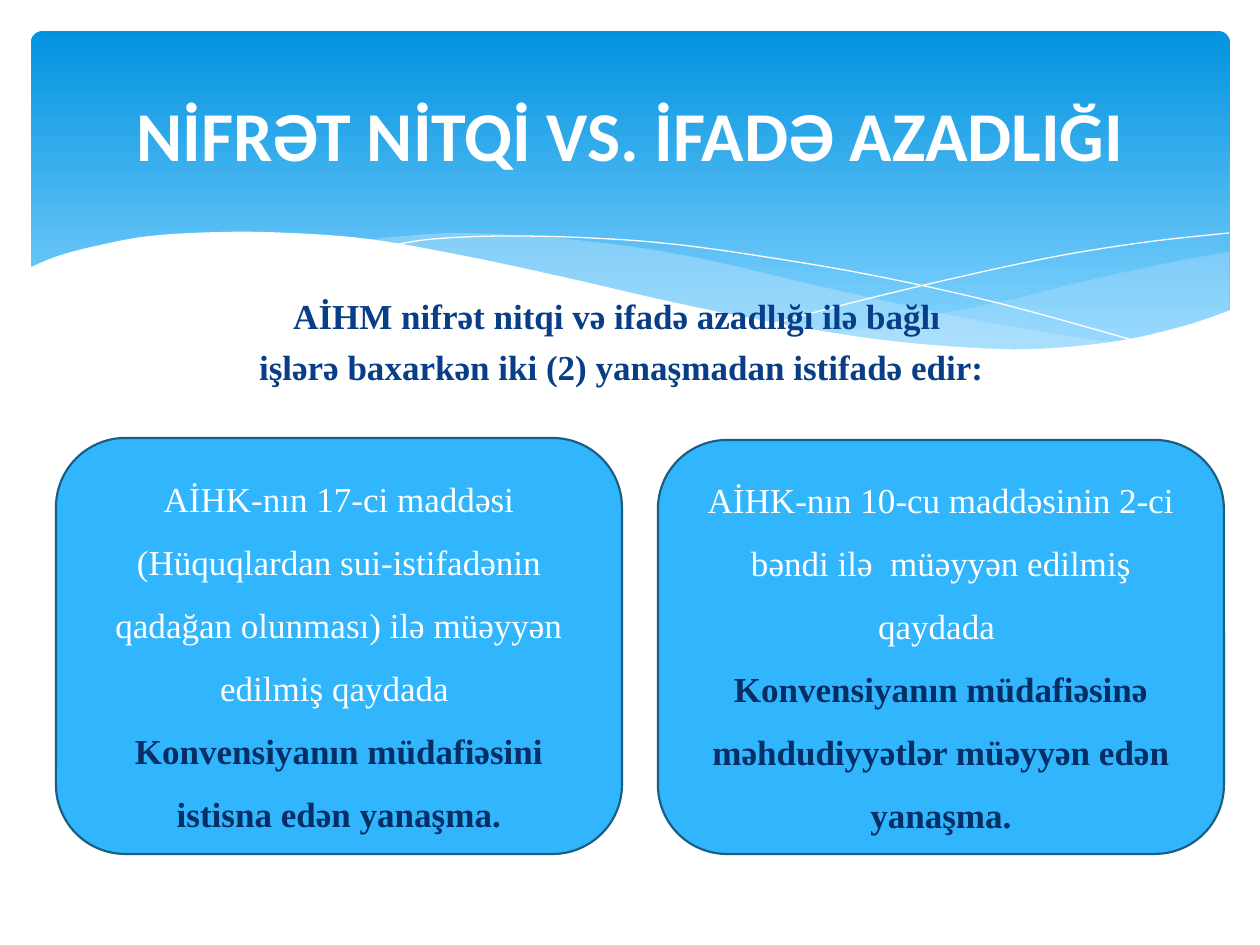
from lxml.etree import SubElement
from pptx import Presentation
from pptx.dml.color import RGBColor
from pptx.enum.shapes import MSO_SHAPE
from pptx.enum.text import MSO_ANCHOR, PP_ALIGN
from pptx.oxml.ns import qn
from pptx.util import Pt

PX = 914400 / 126
SLIDE_WIDTH, SLIDE_HEIGHT = 1260, 945
CURVE_STEPS = 6

WHITE = RGBColor(0xFF, 0xFF, 0xFF)
SKY_TOP = RGBColor(0x02, 0x93, 0xE0)
SKY_BOTTOM = RGBColor(0x83, 0xD3, 0xFE)
PALE_BLUE = RGBColor(0xC6, 0xE7, 0xFC)
CARD_BLUE = RGBColor(0x31, 0xB6, 0xFD)
CARD_EDGE = RGBColor(0x19, 0x5F, 0x84)
INTRO_BLUE = RGBColor(0x07, 0x3E, 0x87)
DEEP_BLUE = RGBColor(0x05, 0x2E, 0x65)

RIGHT_WAVE = [
    [(1229, 252), (1178, 261), (1085, 281), (1014, 299), (949, 312), (890, 324), (833, 334)],
    [(833, 334), (871, 339), (939, 347), (1012, 350), (1076, 348), (1130, 340), (1178, 330),
     (1229, 311)],
]
MIDDLE_WAVE = [
    [(1125, 344), (1055, 334), (976, 320), (890, 302), (793, 280), (717, 262), (648, 249),
     (586, 241), (529, 236), (455, 233), (394, 237), (360, 241)],
    [(360, 241), (431, 251), (509, 266), (566, 280), (668, 302), (757, 321), (838, 335),
     (910, 345), (974, 349), (1031, 350), (1092, 348), (1125, 344)],
]
FALLING_LINE = [[(389, 246), (433, 239), (505, 236), (591, 238), (672, 244), (766, 257),
                 (876, 276), (1002, 304), (1143, 343)]]
RISING_LINE = [[(772, 324), (847, 304), (942, 281), (1053, 257), (1147, 242), (1229, 233)]]
WHITE_WAVE = [
    [(1231, 310), (1184, 326), (1118, 341), (1037, 349), (959, 347), (867, 338), (760, 320),
     (667, 301), (563, 277), (460, 255), (368, 239), (290, 233), (223, 232), (150, 236),
     (96, 246), (58, 256), (29, 268)],
    [(29, 415), (1231, 415)],
]

TITLE = "NİFRƏT NİTQİ VS. İFADƏ AZADLIĞI"
INTRO = [
    "AİHM nifrət nitqi və ifadə azadlığı ilə bağlı ",
    "işlərə baxarkən iki (2) yanaşmadan istifadə edir:",
]
CARDS = [
    ((56, 438, 566, 416),
     "AİHK-nın 17-ci maddəsi (Hüquqlardan sui-istifadənin qadağan olunması) "
     "ilə müəyyən edilmiş qaydada ",
     "Konvensiyanın müdafiəsini istisna edən yanaşma."),
    ((658, 440, 566, 414),
     "AİHK-nın 10-cu maddəsinin 2-ci bəndi ilə  müəyyən edilmiş qaydada ",
     "Konvensiyanın müdafiəsinə məhdudiyyətlər müəyyən edən yanaşma."),
]


def px(length):
    """Turn a length in px into EMU."""
    return round(length * PX)


def write_text(paragraph, text, *, size=20, font="Times New Roman", color=WHITE, bold=False,
               line_spacing=None, space_before=0):
    """Write one centred, formatted run into a paragraph."""
    paragraph.alignment = PP_ALIGN.CENTER
    paragraph.line_spacing = line_spacing
    paragraph.space_before = Pt(space_before)
    run = paragraph.add_run()
    run.text = text
    run.font.size = Pt(size)
    run.font.name = font
    run.font.bold = bold
    run.font.color.rgb = color


def smooth(points):
    """Return points along a Catmull-Rom curve through the given points."""
    padded = [points[0], *points, points[-1]]
    curve = [points[0]]
    for before, start, end, after in zip(padded, padded[1:], padded[2:], padded[3:]):
        for step in range(1, CURVE_STEPS + 1):
            t = step / CURVE_STEPS
            curve.append(tuple(
                (2 * b + (c - a) * t + (2 * a - 5 * b + 4 * c - d) * t ** 2
                 + (3 * b - a - 3 * c + d) * t ** 3) / 2
                for a, b, c, d in zip(before, start, end, after)))
    return curve


def add_wave(slide, box, edges, fill=None, opacity=100):
    """Add a filled wave, or a white hairline where no fill is given."""
    left, top, _, _ = box
    points = [(px(left + x), px(top + y)) for edge in edges for x, y in smooth(edge)]
    builder = slide.shapes.build_freeform(*points[0], scale=1.0)
    builder.add_line_segments(points[1:], close=fill is not None)
    shape = builder.convert_to_shape()
    shape.shadow.inherit = False
    if fill is None:
        shape.fill.background()
        shape.line.color.rgb = WHITE
        shape.line.width = 0
        return
    shape.line.fill.background()
    shape.fill.solid()
    shape.fill.fore_color.rgb = fill
    if opacity < 100:
        color = shape._element.spPr.find(qn("a:solidFill")).find(qn("a:srgbClr"))
        SubElement(color, qn("a:alpha"), val=str(opacity * 1000))


def add_banner(slide, box):
    """Add the gradient panel with its waves."""
    left, top, _, _ = box
    panel = slide.shapes.add_shape(
        MSO_SHAPE.ROUNDED_RECTANGLE, px(left + 31), px(top + 31), px(1199), px(340))
    panel.adjustments[0] = 0.034
    panel.shadow.inherit = False
    panel.line.fill.background()
    panel.fill.gradient()
    panel.fill.gradient_angle = 270
    for stop, position, color in zip(panel.fill.gradient_stops, (0, 0.9), (SKY_TOP, SKY_BOTTOM)):
        stop.position = position
        stop.color.rgb = color
    add_wave(slide, box, RIGHT_WAVE, PALE_BLUE, 29)
    add_wave(slide, box, MIDDLE_WAVE, PALE_BLUE, 40)
    add_wave(slide, box, FALLING_LINE)
    add_wave(slide, box, RISING_LINE)
    add_wave(slide, box, WHITE_WAVE, WHITE)


def place_title(slide, box):
    """Move the title in front of the banner and format it."""
    title = slide.shapes.title
    title.left, title.top, title.width, title.height = map(px, box)
    title.text_frame.vertical_anchor = MSO_ANCHOR.MIDDLE
    write_text(title.text_frame.paragraphs[0], TITLE, size=40, font="Calibri", bold=True)
    slide.shapes._spTree.append(title._element)


def add_intro(slide, box):
    """Add the introduction, standing on the bottom of its box."""
    frame = slide.shapes.add_textbox(*map(px, box)).text_frame
    frame.word_wrap = True
    frame.vertical_anchor = MSO_ANCHOR.BOTTOM
    for index, text in enumerate(INTRO):
        paragraph = frame.add_paragraph() if index else frame.paragraphs[0]
        write_text(paragraph, text, color=INTRO_BLUE, bold=True, space_before=5)


def add_card(slide, box, basis, approach):
    """Add a rounded card with a legal basis and the approach it leads to."""
    card = slide.shapes.add_shape(MSO_SHAPE.ROUNDED_RECTANGLE, *map(px, box))
    card.shadow.inherit = False
    card.fill.solid()
    card.fill.fore_color.rgb = CARD_BLUE
    card.line.color.rgb = CARD_EDGE
    card.line.width = Pt(1.25)
    frame = card.text_frame
    frame.word_wrap = True
    frame.vertical_anchor = MSO_ANCHOR.MIDDLE
    write_text(frame.paragraphs[0], basis, line_spacing=1.5)
    write_text(frame.add_paragraph(), approach, color=DEEP_BLUE, bold=True, line_spacing=1.5)


def main():
    """Build the slide and save the presentation."""
    presentation = Presentation()
    presentation.slide_width = px(SLIDE_WIDTH)
    presentation.slide_height = px(SLIDE_HEIGHT)
    slide = presentation.slides.add_slide(presentation.slide_layouts[5])
    add_banner(slide, (0, 0, SLIDE_WIDTH, 415))
    add_intro(slide, (101, 192, 1041, 202))
    for box, basis, approach in CARDS:
        add_card(slide, box, basis, approach)
    place_title(slide, (63, 47, 1134, 173))
    presentation.save("out.pptx")


if __name__ == "__main__":
    main()
